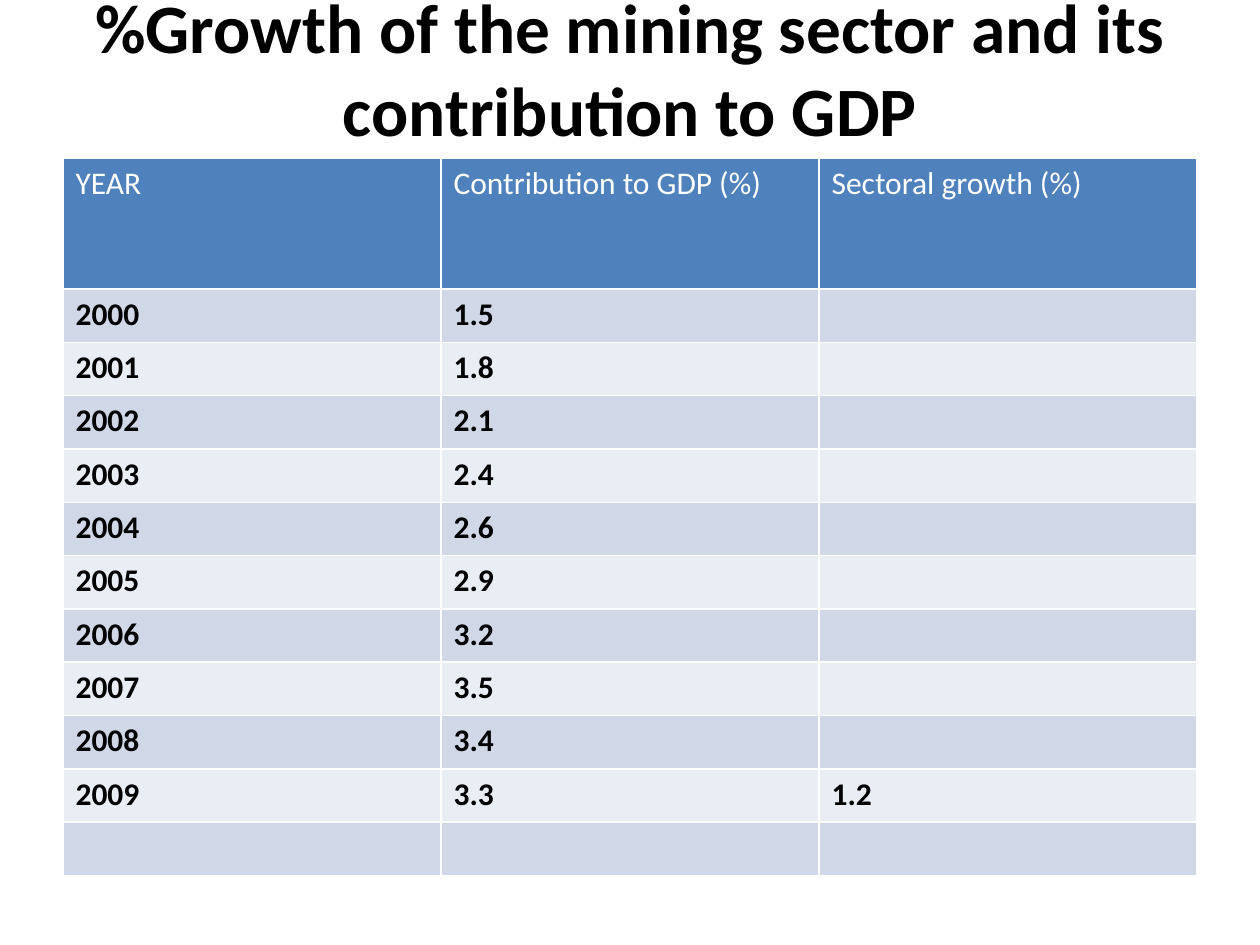
from pptx import Presentation
from pptx.dml.color import RGBColor
from pptx.enum.text import MSO_ANCHOR, MSO_AUTO_SIZE, PP_ALIGN
from pptx.util import Pt

CENTER = PP_ALIGN.CENTER
MIDDLE = MSO_ANCHOR.MIDDLE
NO_FIT = MSO_AUTO_SIZE.NONE

EMU_PER_PX = 914400 / 126

HEADERS = ["YEAR", "Contribution to GDP (%)", "Sectoral growth (%)"]
GDP_SHARE = ["1.5", "1.8", "2.1", "2.4", "2.6", "2.9", "3.2", "3.5", "3.4", "3.3"]
SECTOR_GROWTH = {2009: "1.2"}


def px(n):
    return round(n * EMU_PER_PX)


def color(hex_string):
    return RGBColor.from_string(hex_string)


class SlideBuilder:
    FONT = "Calibri"
    BLACK, WHITE = "000000", "FFFFFF"
    HEADER_FILL = "4F81BD"
    BANDS = ["D0D8E8", "E9EDF4"]

    def __init__(self, prs):
        self.s = prs.slides.add_slide(prs.slide_layouts[5])

    def format_runs(self, tf, size, hex_string, bold):
        for p in tf.paragraphs:
            for r in p.runs:
                r.font.name = self.FONT
                r.font.size = Pt(size)
                r.font.bold = bold
                r.font.color.rgb = color(hex_string)

    def title(self, text, x, y, w, h):
        sp = self.s.shapes.title
        sp.left, sp.top, sp.width, sp.height = px(x), px(y), px(w), px(h)
        tf = sp.text_frame
        tf.text = text
        tf.word_wrap = True
        tf.auto_size = NO_FIT
        tf.vertical_anchor = MIDDLE
        tf.paragraphs[0].alignment = CENTER
        self.format_runs(tf, 39.6, self.BLACK, True)

    def table(self, rows, x, y, w, h, header_h):
        frame = self.s.shapes.add_table(len(rows), len(rows[0]), px(x), px(y), px(w), px(h))
        table = frame.table
        body_h = px(h - header_h) // (len(rows) - 1)
        for i, values in enumerate(rows):
            header = i == 0
            table.rows[i].height = px(header_h) if header else body_h
            fill = self.HEADER_FILL if header else self.BANDS[(i - 1) % 2]
            for j, value in enumerate(values):
                cell = table.cell(i, j)
                cell.fill.solid()
                cell.fill.fore_color.rgb = color(fill)
                cell.text_frame.text = value
                self.format_runs(cell.text_frame, 18,
                                 self.WHITE if header else self.BLACK, not header)


def main():
    prs = Presentation()
    prs.slide_width, prs.slide_height = px(1260), px(945)
    slide = SlideBuilder(prs)

    # Title
    slide.title("%Growth of the mining sector and its contribution to GDP", 63, 0, 1134, 135)

    # Yearly figures, closed by an empty row
    rows = [HEADERS]
    for year, share in enumerate(GDP_SHARE, start=2000):
        rows.append([str(year), share, SECTOR_GROWTH.get(year, "")])
    rows.append([""] * len(HEADERS))
    slide.table(rows, 63, 158, 1134, 718, 131)

    prs.save("out.pptx")


if __name__ == "__main__":
    main()
